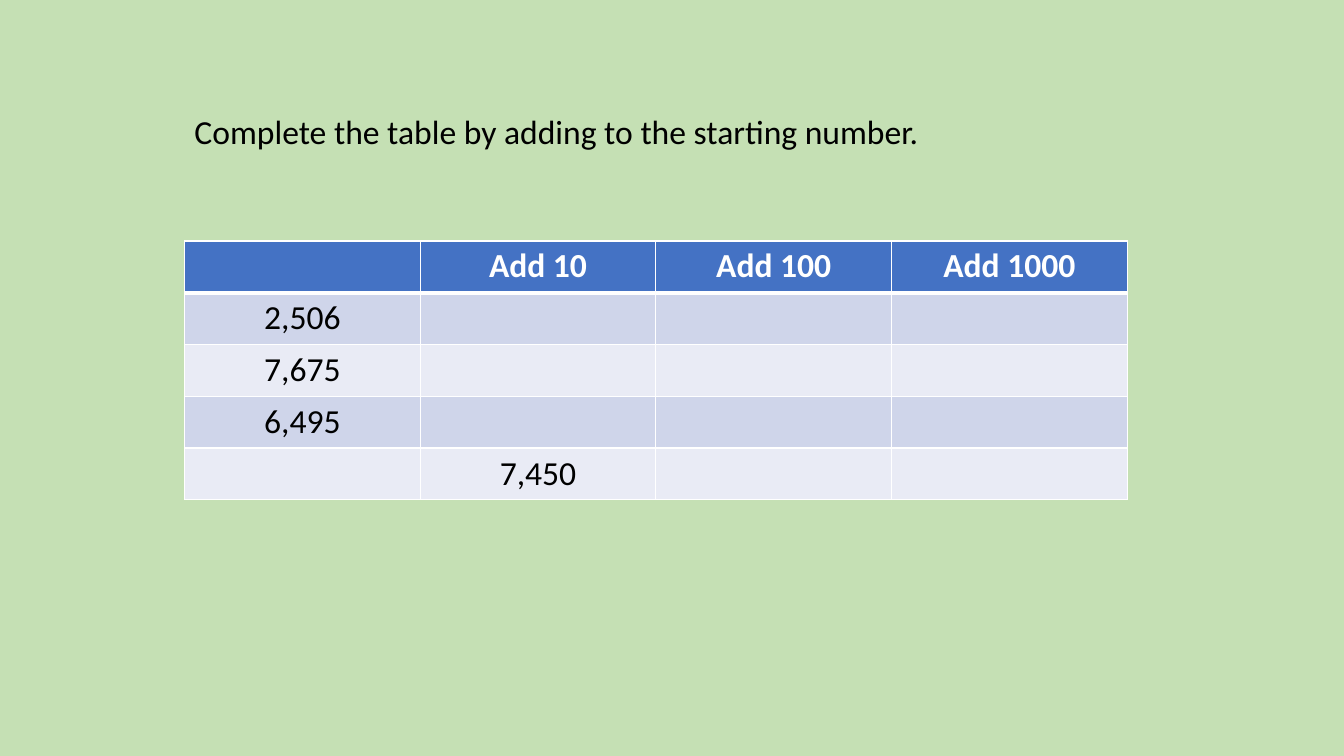
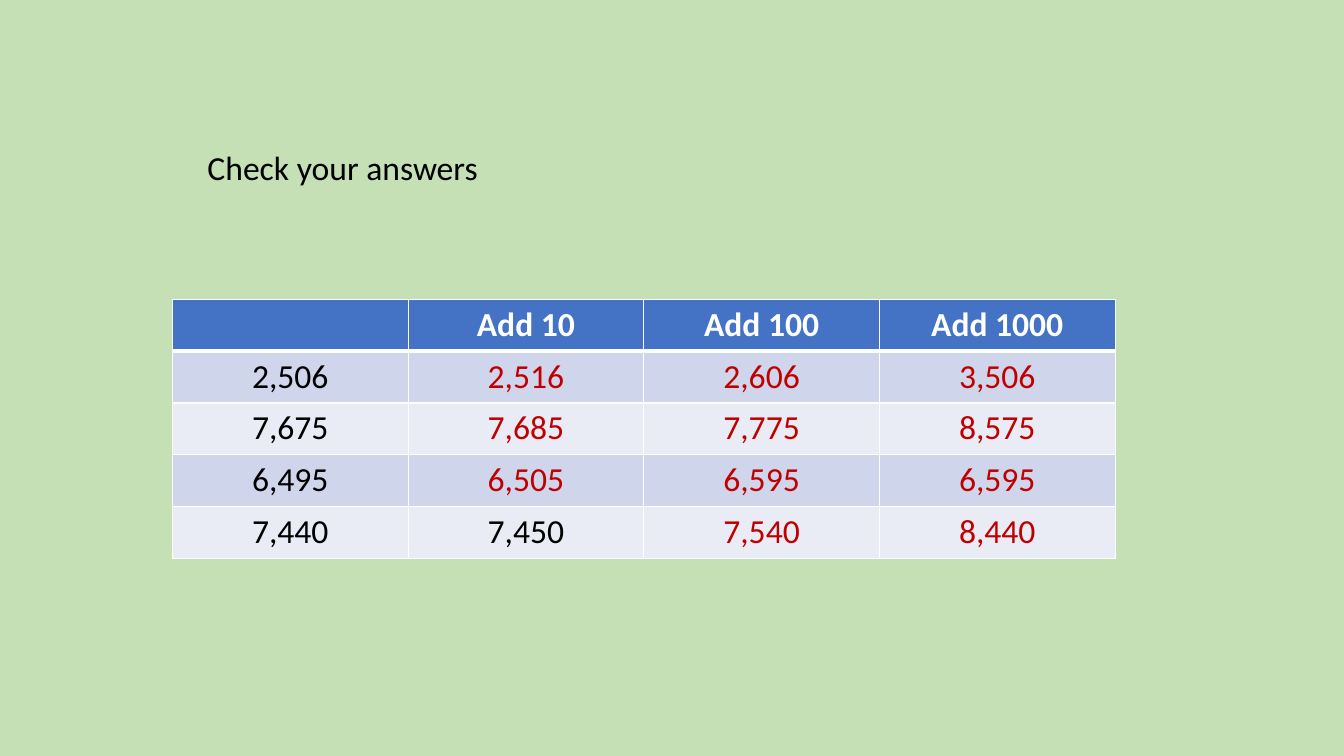
from lxml import etree
from pptx import Presentation, util as u
from pptx.dml.color import RGBColor
from pptx.enum import text
from pptx.oxml import ns

GREEN = RGBColor(0xC5, 0xE0, 0xB4)
BLUE = RGBColor(0x44, 0x72, 0xC4)
BANDS = RGBColor(0xCF, 0xD5, 0xEA), RGBColor(0xE9, 0xEB, 0xF5)
WHITE = RGBColor(0xFF, 0xFF, 0xFF)
BLACK = RGBColor(0, 0, 0)
RED = RGBColor(0xC0, 0, 0)

HEADER = ["", "Add 10", "Add 100", "Add 1000"]
QUESTIONS = [
    ["2,506", "", "", ""],
    ["7,675", "", "", ""],
    ["6,495", "", "", ""],
    ["", "7,450", "", ""],
]
ANSWERS = [
    ["2,506", "2,516", "2,606", "3,506"],
    ["7,675", "7,685", "7,775", "8,575"],
    ["6,495", "6,505", "6,595", "6,595"],
    ["7,440", "7,450", "7,540", "8,440"],
]


class Worksheet:
    """Shared style and the current slide; lengths are percentages of the slide."""

    font = "Calibri"
    size = u.Pt(24)

    def __init__(self, prs):
        self.prs = prs
        self.s = None

    def x(self, share):
        return round(self.prs.slide_width * share / 100)

    def y(self, share):
        return round(self.prs.slide_height * share / 100)

    def new_slide(self):
        self.s = self.prs.slides.add_slide(self.prs.slide_layouts[6])
        self.s.background.fill.solid()
        self.s.background.fill.fore_color.rgb = GREEN

    def run(self, p, words, color=BLACK, bold=False):
        r = p.add_run()
        r.text = words
        r.font.name, r.font.size, r.font.bold = self.font, self.size, bold
        r.font.color.rgb = color

    def instruction(self, left, top, words):
        sp = self.s.shapes.add_textbox(self.x(left), self.y(top), self.x(66.3), self.y(6.7))
        tf = sp.text_frame
        tf.word_wrap = True
        tf.auto_size = text.MSO_AUTO_SIZE.SHAPE_TO_FIT_TEXT
        self.run(tf.paragraphs[0], words)

    def borders(self, cell, **widths):
        """Draw white cell borders, with widths in points keyed by side L, R, T, B."""
        tcPr = cell._tc.get_or_add_tcPr()
        for side, width in widths.items():
            ln = etree.SubElement(tcPr, ns.qn(f"a:ln{side}"), w=str(u.Pt(width)))
            fill = etree.SubElement(ln, ns.qn("a:solidFill"))
            etree.SubElement(fill, ns.qn("a:srgbClr"), val=str(WHITE))

    def cell(self, cell, words, fill, color, row):
        header = row == 0
        self.borders(cell, L=1, R=1, T=3 if row == 1 else 1, B=3 if header else 1)
        cell.fill.solid()
        cell.fill.fore_color.rgb = fill
        p = cell.text_frame.paragraphs[0]
        p.alignment = text.PP_ALIGN.CENTER
        if words:
            self.run(p, words, color, header)

    def table(self, left, top, rows, given):
        """Draw the header and rows; numbers that are not given appear in red."""
        grid = [HEADER, *rows]
        table = self.s.shapes.add_table(
            len(grid), len(HEADER), self.x(left), self.y(top), self.x(70.15), self.y(34.27)
        ).table
        for i, row in enumerate(grid):
            for j, words in enumerate(row):
                if i == 0:
                    fill, color = BLUE, WHITE
                else:
                    fill = BANDS[(i - 1) % 2]
                    color = BLACK if j == 0 or given[i - 1][j] else RED
                self.cell(table.cell(i, j), words, fill, color, i)


def main():
    prs = Presentation()
    prs.slide_width, prs.slide_height = u.Inches(13.33), u.Inches(7.5)
    sheet = Worksheet(prs)

    sheet.new_slide()
    sheet.table(13.73, 31.87, QUESTIONS, QUESTIONS)
    sheet.instruction(13.73, 14, "Complete the table by adding to the starting number.")

    sheet.new_slide()
    sheet.table(12.83, 39.6, ANSWERS, QUESTIONS)
    sheet.instruction(14.7, 18.8, "Check your answers")

    prs.save("out.pptx")


if __name__ == "__main__":
    main()
